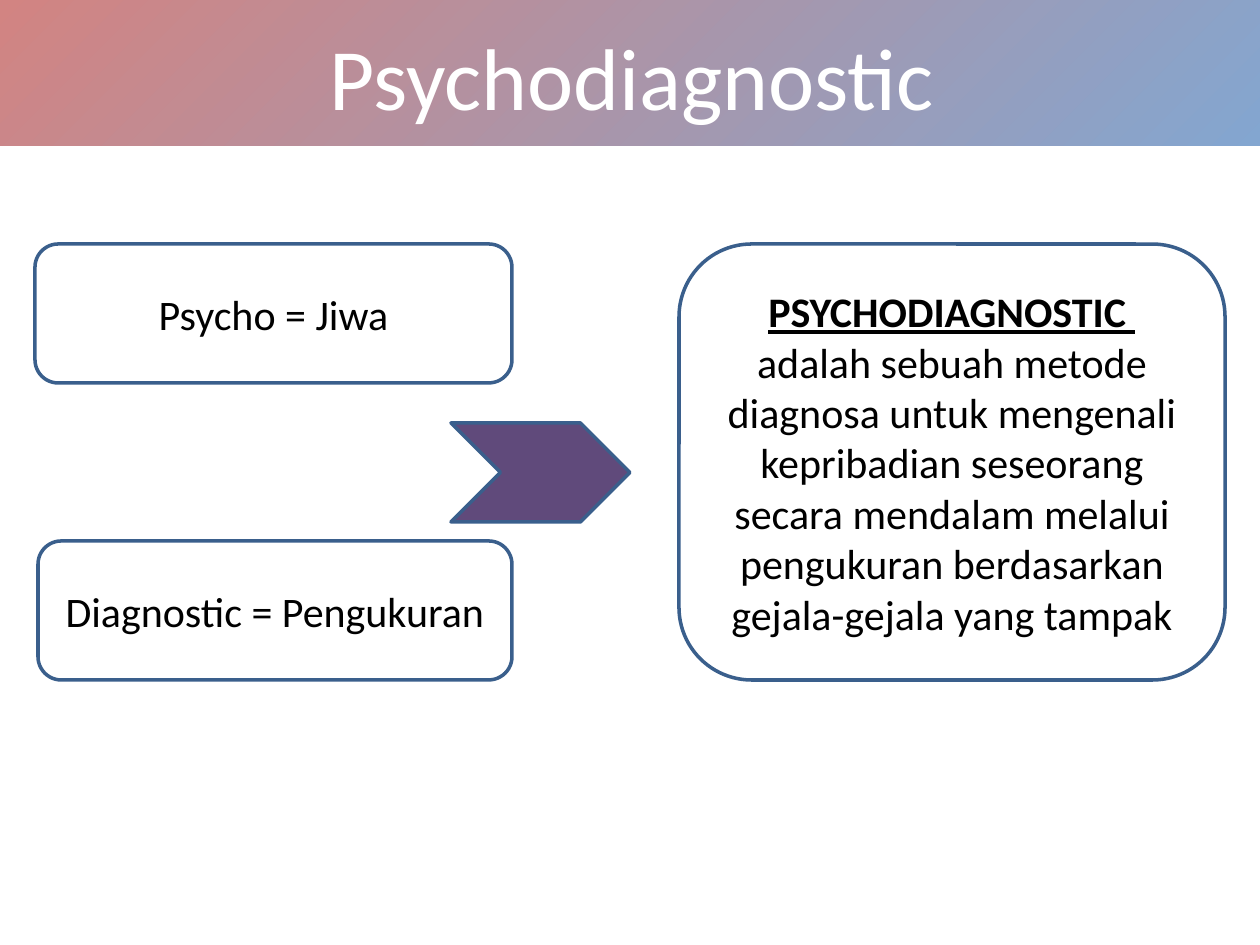
from pptx import Presentation
from pptx.dml.color import RGBColor
from pptx.enum.shapes import MSO_SHAPE
from pptx.enum.text import MSO_ANCHOR, PP_ALIGN
from pptx.util import Pt
from lxml.etree import SubElement
from pptx.oxml.ns import qn

SCALE = 914400 / 126
COLORS = {
    "white": "FFFFFF",
    "black": "000000",
    "outline": "3A5F8C",
    "arrow": "604A7B",
    "blue": "4F81BD",
    "red": "C0504D",
}
BODY = {"name": "Calibri", "size": Pt(24), "bold": False, "underline": False}
TERM = {**BODY, "bold": True, "underline": True}
TITLE = {**BODY, "size": Pt(50)}


def emu(px):
    return round(px * SCALE)


def color(name):
    return RGBColor.from_string(COLORS[name])


def write(frame, paragraphs, color_name):
    frame.word_wrap = True
    frame.vertical_anchor = MSO_ANCHOR.MIDDLE
    for index, (text, font_format) in enumerate(paragraphs):
        para = frame.add_paragraph() if index else frame.paragraphs[0]
        para.alignment = PP_ALIGN.CENTER
        span = para.add_run()
        span.text = text
        span.font.color.rgb = color(color_name)
        for name, value in font_format.items():
            setattr(span.font, name, value)


def add_panel(page, kind, box, fill):
    panel = page.shapes.add_shape(kind, *map(emu, box))
    panel.shadow.inherit = False
    panel.fill.solid()
    panel.fill.fore_color.rgb = color(fill)
    panel.line.color.rgb = color("outline")
    panel.line.width = Pt(2)
    return panel


def add_header(page, box):
    left, top, width, height = box
    band = page.shapes.add_shape(MSO_SHAPE.RECTANGLE, *map(emu, box))
    band.shadow.inherit = False
    band.line.fill.background()
    band.fill.gradient()
    band.fill.gradient_angle = 135
    for stop, name, position in zip(band.fill.gradient_stops, ("blue", "red"), (0, 1)):
        stop.color.rgb = color(name)
        stop.position = position
    for element in band.fill._xPr.iter(qn("a:srgbClr")):
        SubElement(element, qn("a:alpha"), val="70000")

    title = page.shapes.title
    title.element.addprevious(band.element)
    title_box = (left + 34, top + 26, width - 64, 100)
    for name, value in zip(("left", "top", "width", "height"), title_box):
        setattr(title, name, emu(value))
    write(title.text_frame, [("Psychodiagnostic", TITLE)], "white")


def add_definition(page, box):
    left, top, width, height = box
    part_height = 139
    parts = [
        ("Psycho = Jiwa", (left, top, 477, part_height)),
        ("Diagnostic = Pengukuran", (left + 3, top + height - part_height, 474, part_height)),
    ]
    for text, part_box in parts:
        part = add_panel(page, MSO_SHAPE.ROUNDED_RECTANGLE, part_box, "white")
        write(part.text_frame, [(text, BODY)], "black")

    add_panel(page, MSO_SHAPE.CHEVRON, (left + 416, top + 179, 179, 99), "arrow")

    meaning_width = 546
    meaning_box = (left + width - meaning_width, top, meaning_width, height)
    meaning = add_panel(page, MSO_SHAPE.ROUNDED_RECTANGLE, meaning_box, "white")
    write(
        meaning.text_frame,
        [
            ("PSYCHODIAGNOSTIC ", TERM),
            (
                "adalah sebuah metode diagnosa untuk mengenali kepribadian seseorang "
                "secara mendalam melalui pengukuran berdasarkan gejala-gejala yang tampak",
                BODY,
            ),
        ],
        "black",
    )


def main():
    deck = Presentation()
    deck.slide_width, deck.slide_height = emu(1260), emu(945)
    page = deck.slides.add_slide(deck.slide_layouts[5])
    add_header(page, (0, 0, 1260, 146))
    add_definition(page, (35, 244, 1190, 436))
    deck.save("out.pptx")


if __name__ == "__main__":
    main()
